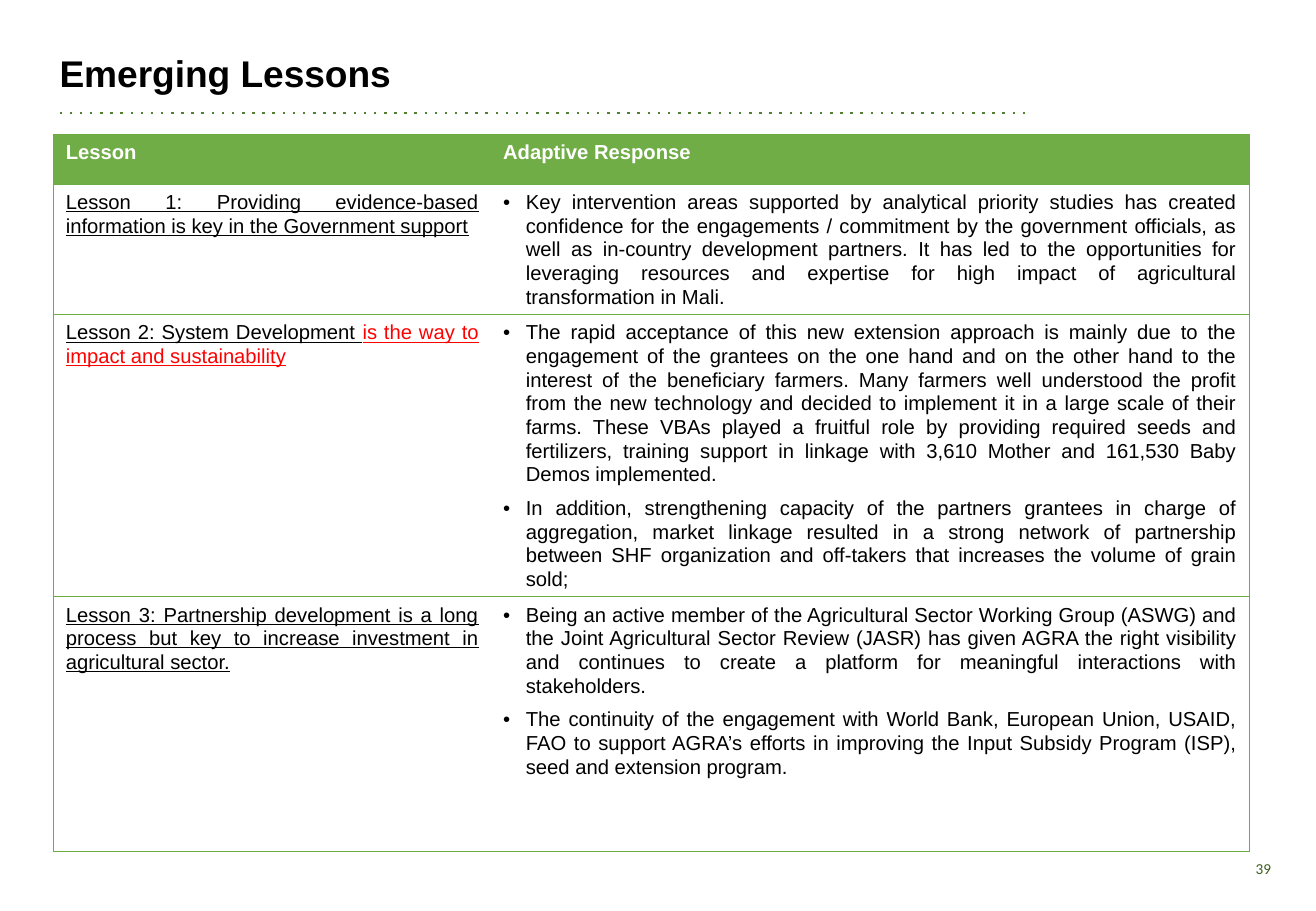
from lxml import etree
from pptx import Presentation
from pptx.dml.color import RGBColor
from pptx.enum.shapes import MSO_CONNECTOR
from pptx.enum.text import MSO_ANCHOR, PP_ALIGN
from pptx.oxml.ns import qn
from pptx.util import Pt

STRAIGHT = MSO_CONNECTOR.STRAIGHT
MIDDLE, BOTTOM = MSO_ANCHOR.MIDDLE, MSO_ANCHOR.BOTTOM
LEFT, RIGHT, JUSTIFY = PP_ALIGN.LEFT, PP_ALIGN.RIGHT, PP_ALIGN.JUSTIFY

BLACK = RGBColor(0x00, 0x00, 0x00)
WHITE = RGBColor(0xFF, 0xFF, 0xFF)
RED = RGBColor(0xFF, 0x00, 0x00)
HEADER_GREEN = RGBColor(0x70, 0xAD, 0x47)
BORDER_GREEN = RGBColor(0x6D, 0xAC, 0x43)
RULE_GREEN = RGBColor(0x54, 0x81, 0x35)
NUMBER_GREEN = RGBColor(0x3F, 0x5F, 0x1F)

HEADERS = ("Lesson", "Adaptive Response")
# Each lesson: (text, colour) pieces, then the bullets of its response
LESSONS = [
    ([("Lesson 1: Providing evidence-based information is key in the Government support", BLACK)],
     ["Key intervention areas supported by analytical priority studies has created confidence for "
      "the engagements / commitment by the government officials, as well as in-country development "
      "partners. It has led to the opportunities for leveraging resources and expertise for high "
      "impact of agricultural transformation in Mali."]),
    ([("Lesson 2: System Development ", BLACK),
      ("is the way to impact and sustainability", RED)],
     ["The rapid acceptance of this new extension approach is mainly due to the engagement of the "
      "grantees on the one hand and on the other hand to the interest of the beneficiary farmers. "
      "Many farmers well understood the profit from the new technology and decided to implement it "
      "in a large scale of their farms. These VBAs played a fruitful role by providing required "
      "seeds and fertilizers, training support in linkage with 3,610 Mother and 161,530 Baby Demos "
      "implemented.",
      "In addition, strengthening capacity of the partners grantees in charge of aggregation, "
      "market linkage resulted in a strong network of partnership between SHF organization and "
      "off-takers that increases the volume of grain sold;"]),
    ([("Lesson 3: Partnership development is a long process but key to increase investment in "
       "agricultural sector.", BLACK)],
     ["Being an active member of the Agricultural Sector Working Group (ASWG) and the Joint "
      "Agricultural Sector Review (JASR) has given AGRA the right visibility and continues to "
      "create a platform for meaningful interactions with stakeholders.",
      "The continuity of the engagement with World Bank, European Union, USAID, FAO to support "
      "AGRA’s efforts in improving the Input Subsidy Program (ISP), seed and extension program."]),
]
COLUMN_WIDTHS = (259.2, 449.5)
ROW_HEIGHTS = (29.6, 77.2, 167.2, 151.2)


def format_run(r, size, color, bold=False, underline=False, name="Arial"):
    r.font.name, r.font.size = name, Pt(size)
    r.font.bold, r.font.underline = bold, underline
    r.font.color.rgb = color


def add_title(s, text):
    sp = s.shapes.title
    sp.left, sp.top, sp.width, sp.height = Pt(35.3), Pt(10.8), Pt(570), Pt(46)
    tf = sp.text_frame
    tf.text = text
    tf.margin_left = tf.margin_right = tf.margin_top = tf.margin_bottom = 0
    tf.vertical_anchor = BOTTOM
    p = tf.paragraphs[0]
    p.alignment, p.line_spacing = LEFT, 0.9
    format_run(p.runs[0], 22, BLACK, bold=True)


def add_dotted_rule(s, left, right, y):
    line = s.shapes.add_connector(STRAIGHT, Pt(left), Pt(y), Pt(right), Pt(y))
    line.line.color.rgb = RULE_GREEN
    line.line.width = Pt(1.5)
    sp_pr = line._element.spPr
    etree.SubElement(sp_pr.find(qn("a:ln")), qn("a:prstDash"), val="dot")
    etree.SubElement(sp_pr, qn("a:effectLst"))


def add_page_number(s, text):
    tf = s.shapes.add_textbox(Pt(569.5), Pt(500.4), Pt(191), Pt(28.8)).text_frame
    tf.word_wrap = True
    tf.vertical_anchor = MIDDLE
    p = tf.paragraphs[0]
    p.text, p.alignment = text, RIGHT
    format_run(p.runs[0], 9, NUMBER_GREEN, name="Calibri")


def set_borders(cell, hidden):
    """Draw green borders on all sides but the hidden one."""
    tc_pr = cell._tc.get_or_add_tcPr()
    for side in ("lnL", "lnR", "lnT", "lnB"):
        ln = etree.SubElement(tc_pr, qn(f"a:{side}"), w=str(Pt(0.75)))
        if side == hidden:
            etree.SubElement(ln, qn("a:noFill"))
        else:
            fill = etree.SubElement(ln, qn("a:solidFill"))
            etree.SubElement(fill, qn("a:srgbClr"), val=str(BORDER_GREEN))


def add_bullet(p):
    p_pr = p._p.get_or_add_pPr()
    p_pr.set("marL", str(Pt(13.5)))
    p_pr.set("indent", str(-Pt(13.5)))
    color = etree.SubElement(p_pr, qn("a:buClr"))
    etree.SubElement(color, qn("a:srgbClr"), val=str(BLACK))
    etree.SubElement(p_pr, qn("a:buFont"), typeface="Arial")
    etree.SubElement(p_pr, qn("a:buChar"), char="•")


def fill_cell(cell, paragraphs, align=JUSTIFY, bullets=False, **font):
    """Write paragraphs, each a list of (text, colour) pieces."""
    tf = cell.text_frame
    for i, pieces in enumerate(paragraphs):
        p = tf.paragraphs[0] if i == 0 else tf.add_paragraph()
        if bullets:
            add_bullet(p)
        p.alignment, p.line_spacing, p.space_after = align, Pt(14), Pt(6)
        for text, color in pieces:
            r = p.add_run()
            r.text = text
            format_run(r, 12, color, **font)


def add_lessons_table(s):
    frame = s.shapes.add_table(len(ROW_HEIGHTS), len(COLUMN_WIDTHS), Pt(31.8), Pt(79.6),
                               Pt(sum(COLUMN_WIDTHS)), Pt(sum(ROW_HEIGHTS)))
    table = frame.table
    for column, width in zip(table.columns, COLUMN_WIDTHS):
        column.width = Pt(width)
    for i, (row, height) in enumerate(zip(table.rows, ROW_HEIGHTS)):
        row.height = Pt(height)
        for cell, hidden in zip(row.cells, ("lnR", "lnL")):
            set_borders(cell, hidden)
            cell.fill.solid()
            cell.fill.fore_color.rgb = WHITE if i else HEADER_GREEN
    for j, header in enumerate(HEADERS):
        fill_cell(table.cell(0, j), [[(header, WHITE)]], LEFT, bold=True)
    for i, (lesson, responses) in enumerate(LESSONS, 1):
        fill_cell(table.cell(i, 0), [lesson], underline=True)
        fill_cell(table.cell(i, 1), [[(text, BLACK)] for text in responses], bullets=True)


def main():
    prs = Presentation()
    prs.slide_width, prs.slide_height = Pt(780), Pt(540)
    s = prs.slides.add_slide(prs.slide_layouts[5])
    add_title(s, "Emerging Lessons")
    add_dotted_rule(s, 35.3, 611.3, 67)
    add_lessons_table(s)
    add_page_number(s, "39")
    prs.save("out.pptx")


if __name__ == "__main__":
    main()
